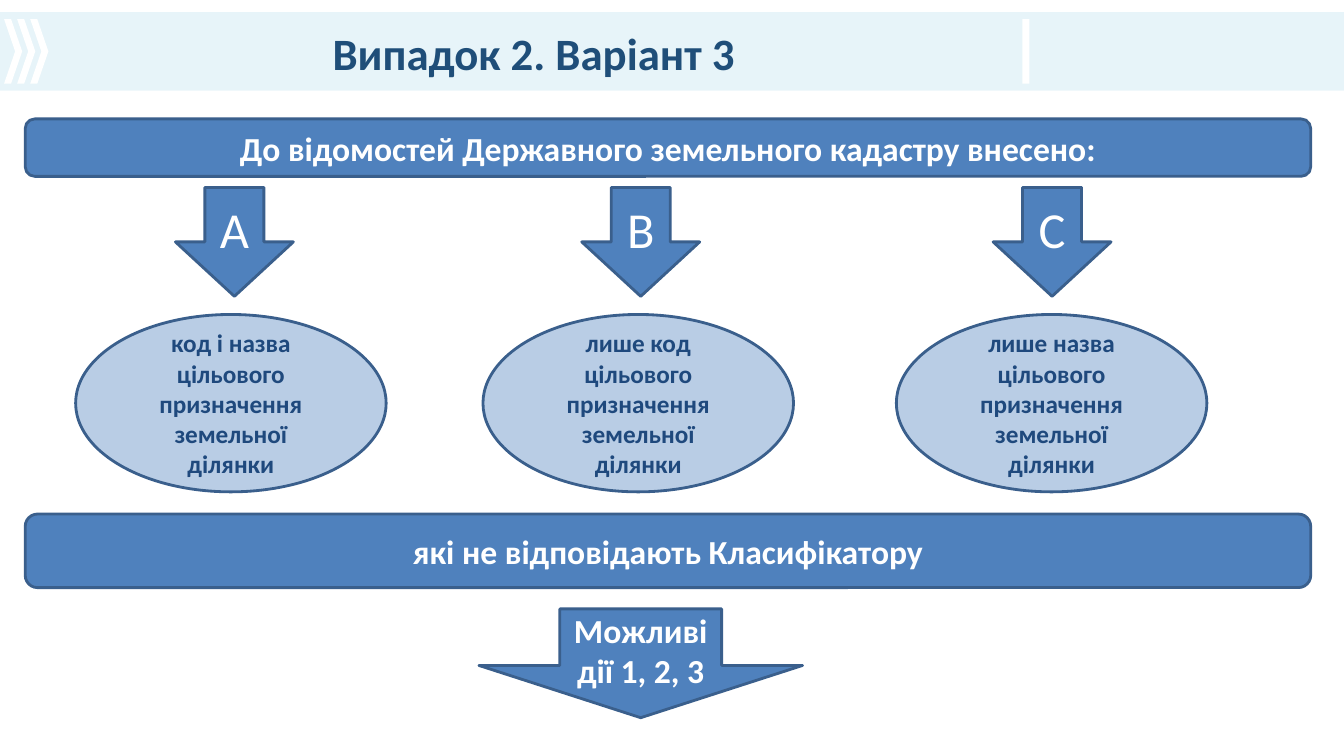
"""Builds the slide on case 2, variant 3, of the land cadastre."""
from dataclasses import dataclass

from lxml.etree import SubElement
from pptx import Presentation
from pptx.dml.color import RGBColor
from pptx.enum.shapes import MSO_SHAPE
from pptx.enum.text import MSO_ANCHOR, PP_ALIGN
from pptx.oxml.ns import qn
from pptx.util import Inches, Pt


@dataclass(frozen=True)
class Theme:
    font: str = "Calibri"
    white: str = "FFFFFF"
    band: str = "DCEFF7"
    band_alpha: int = 66000
    blue: str = "4F81BD"
    pale_blue: str = "B9CDE5"
    outline: str = "3A5F8C"
    navy: str = "1F497D"
    title_color: str = "1F4E79"
    title_size: int = 32
    letter_size: int = 36
    statement_size: int = 24
    detail_size: int = 18
    line_width: int = 2


def write(frame, text, *, font, size, color, bold=True):
    frame.word_wrap = True
    frame.vertical_anchor = MSO_ANCHOR.MIDDLE
    paragraph = frame.paragraphs[0]
    paragraph.alignment = PP_ALIGN.CENTER
    run = paragraph.add_run()
    run.text = text
    run.font.name = font
    run.font.size = Pt(size)
    run.font.bold = bold
    run.font.color.rgb = RGBColor.from_string(color)


class SlideBuilder:
    def __init__(self, slide, theme):
        self.slide = slide
        self.theme = theme

    def paint(self, shape, fill, line=None):
        shape.shadow.inherit = False
        shape.fill.solid()
        shape.fill.fore_color.rgb = RGBColor.from_string(fill)
        if line:
            shape.line.color.rgb = RGBColor.from_string(line)
            shape.line.width = Pt(self.theme.line_width)
        else:
            shape.line.fill.background()
        return shape

    def plain(self, left, top, width, height, fill):
        bar = self.slide.shapes.add_shape(
            MSO_SHAPE.RECTANGLE, Inches(left), Inches(top), Inches(width), Inches(height))
        return self.paint(bar, fill)

    def band(self, left, top, width, height):
        header = self.plain(left, top, width, height, self.theme.band)
        color = header.fill._xPr.find(qn("a:solidFill"))[0]
        SubElement(color, qn("a:alpha"), val=str(self.theme.band_alpha))

    def chevron(self, left, top):
        outline = [(0.11, 0.32), (0, 0), (0.07, 0), (0.18, 0.32), (0.07, 0.64), (0, 0.64)]
        points = [(Inches(left + x), Inches(top + y)) for x, y in outline]
        builder = self.slide.shapes.build_freeform(*points[0])
        builder.add_line_segments(points[1:], close=True)
        self.paint(builder.convert_to_shape(), self.theme.white)

    def title(self, text, left, top, width, height):
        heading = self.slide.shapes.title
        heading.left, heading.top = Inches(left), Inches(top)
        heading.width, heading.height = Inches(width), Inches(height)
        frame = heading.text_frame
        frame.margin_left = frame.margin_right = frame.margin_top = frame.margin_bottom = 0
        write(frame, text, font=self.theme.font, size=self.theme.title_size,
              color=self.theme.title_color)
        self.slide.shapes._spTree.append(heading._element)

    def block(self, kind, text, left, top, width, height, *, fill=None, color=None,
              size=None, bold=True):
        theme = self.theme
        shape = self.slide.shapes.add_shape(
            kind, Inches(left), Inches(top), Inches(width), Inches(height))
        self.paint(shape, fill or theme.blue, theme.outline)
        write(shape.text_frame, text, font=theme.font, size=size or theme.statement_size,
              color=color or theme.white, bold=bold)
        return shape

    def branch(self, letter, subject, arrow_left, oval_left):
        theme = self.theme
        self.block(MSO_SHAPE.DOWN_ARROW, letter, arrow_left, 1.86, 1.17, 1.08,
                   size=theme.letter_size, bold=False)
        self.block(MSO_SHAPE.OVAL, f"{subject} цільового призначення земельної ділянки",
                   oval_left, 3.12, 3.08, 1.76, fill=theme.pale_blue, color=theme.navy,
                   size=theme.detail_size)


def main():
    deck = Presentation()
    deck.slide_width, deck.slide_height = Inches(13.33), Inches(7.5)
    theme = Theme()
    page = SlideBuilder(deck.slides.add_slide(deck.slide_layouts[5]), theme)

    page.band(0, 0.12, 13.33, 0.78)
    for index in range(3):
        page.chevron(0.04 + 0.13 * index, 0.19)
    page.plain(10.14, 0.19, 0.07, 0.64, theme.white)
    page.title("Випадок 2. Варіант 3", 0.5, 0.13, 9.59, 0.79)

    page.block(MSO_SHAPE.ROUNDED_RECTANGLE,
               "До відомостей Державного земельного кадастру внесено:",
               0.25, 1.18, 12.75, 0.57)
    for letter, subject, arrow_left, oval_left in (
        ("А", "код і назва", 1.74, 0.75),
        ("В", "лише код", 5.77, 4.79),
        ("С", "лише назва", 9.85, 8.89),
    ):
        page.branch(letter, subject, arrow_left, oval_left)
    page.block(MSO_SHAPE.ROUNDED_RECTANGLE, "які не відповідають Класифікатору",
               0.25, 5.1, 12.75, 0.73)
    actions = page.block(MSO_SHAPE.DOWN_ARROW, "Можливі дії 1, 2, 3", 4.75, 6.04, 3.21, 1.08)
    actions.adjustments[1] = 0.48

    deck.save("out.pptx")


if __name__ == "__main__":
    main()
